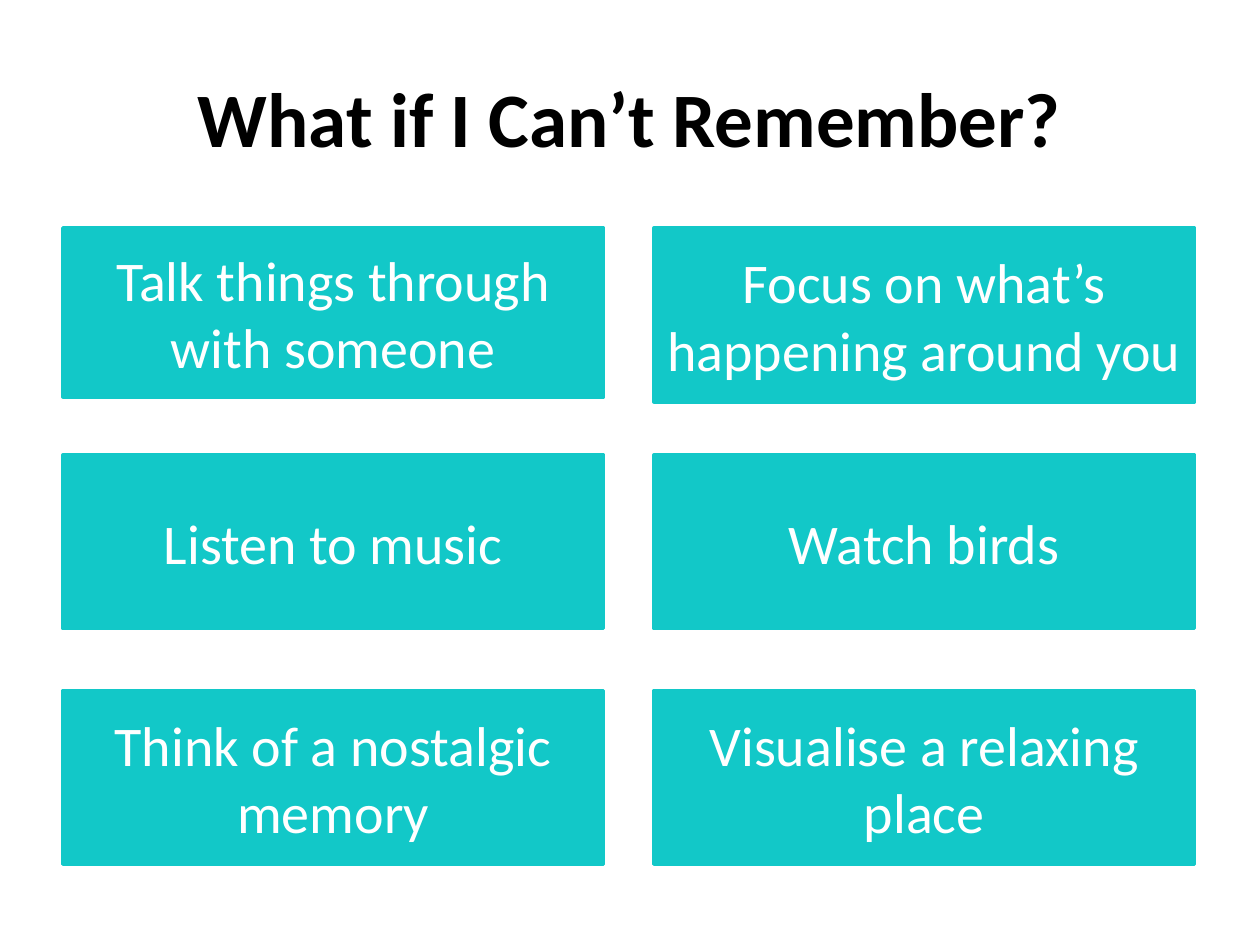
from pptx import Presentation
from pptx.dml.color import RGBColor
from pptx.enum.shapes import MSO_SHAPE
from pptx.enum.text import MSO_ANCHOR, PP_ALIGN
from pptx.util import Inches, Pt

RECTANGLE = MSO_SHAPE.RECTANGLE
MIDDLE = MSO_ANCHOR.MIDDLE
CENTER = PP_ALIGN.CENTER

FONT = "Calibri"
TEAL = "12C8C8"
WHITE = "FFFFFF"
BLACK = "000000"
TITLE_ONLY = 5

COLUMN_LEFTS = (0.5, 5.19)
CARD_WIDTH = 4.29
CARD_HEIGHT = 1.38
CARD_ROWS = (
    (1.81, ("Talk things through with someone", "Focus on what’s happening around you")),
    (3.61, ("Listen to music", "Watch birds")),
    (5.48, ("Think of a nostalgic memory", "Visualise a relaxing place")),
)
HEIGHT_EXCEPTIONS = {"Talk things through with someone": 1.34}


def color(hex_string):
    """Turn a hex string into a colour."""
    return RGBColor.from_string(hex_string)


def write_text(shape, text, size, hex_string, bold=False):
    """Write one centred paragraph into a shape."""
    frame = shape.text_frame
    frame.word_wrap = True
    frame.vertical_anchor = MIDDLE
    para = frame.paragraphs[0]
    para.alignment = CENTER
    span = para.add_run()
    span.text = text
    span.font.name = FONT
    span.font.size = Pt(size)
    span.font.bold = bold
    span.font.color.rgb = color(hex_string)


def add_title(page, text, left, top, width, height):
    """Place and format the title placeholder."""
    title = page.shapes.title
    title.left, title.top = Inches(left), Inches(top)
    title.width, title.height = Inches(width), Inches(height)
    write_text(title, text, size=44, hex_string=BLACK, bold=True)


def add_card(page, text, left, top, width, height):
    """Draw one filled card with its suggestion."""
    card = page.shapes.add_shape(
        RECTANGLE, Inches(left), Inches(top), Inches(width), Inches(height)
    )
    card.shadow.inherit = False
    card.fill.solid()
    card.fill.fore_color.rgb = color(TEAL)
    card.line.color.rgb = color(TEAL)
    card.line.width = Pt(2)
    write_text(card, text, size=32, hex_string=WHITE)


def add_cards(page):
    """Lay out the suggestion cards in two columns."""
    for top, texts in CARD_ROWS:
        for left, text in zip(COLUMN_LEFTS, texts):
            height = HEIGHT_EXCEPTIONS.get(text, CARD_HEIGHT)
            add_card(page, text, left, top, CARD_WIDTH, height)


def main():
    """Build and save the deck."""
    deck = Presentation()
    deck.slide_width, deck.slide_height = Inches(10), Inches(7.5)
    page = deck.slides.add_slide(deck.slide_layouts[TITLE_ONLY])
    add_title(page, "What if I Can’t Remember?", 0.5, 0.3, 9, 1.25)
    add_cards(page)
    deck.save("out.pptx")


if __name__ == "__main__":
    main()
